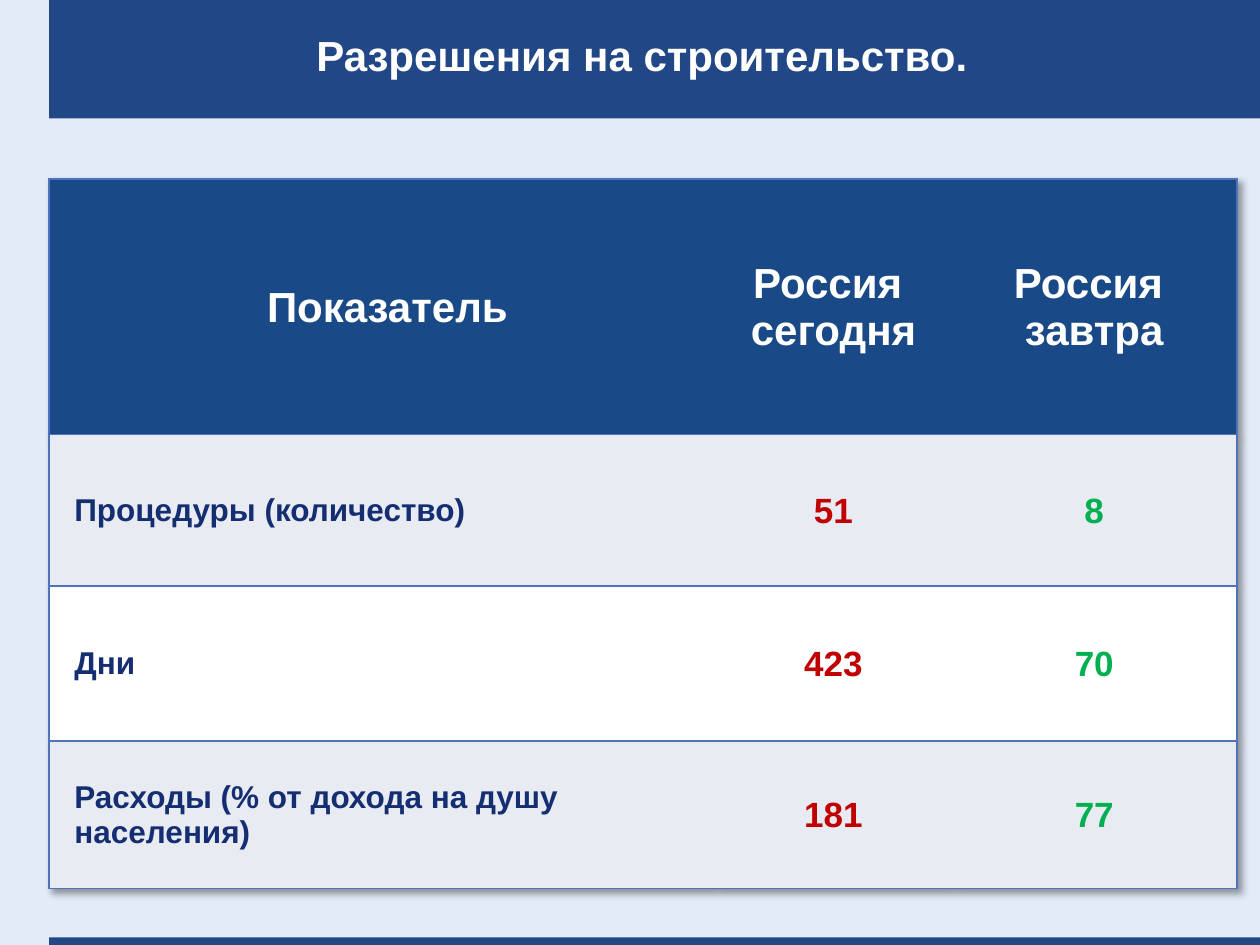
from lxml.etree import SubElement
from pptx import Presentation
from pptx.dml.color import RGBColor
from pptx.enum.shapes import MSO_SHAPE
from pptx.enum.text import MSO_ANCHOR, PP_ALIGN
from pptx.oxml import parse_xml
from pptx.oxml.ns import nsdecls, qn
from pptx.util import Inches, Pt

PALE = RGBColor(0xE3, 0xEB, 0xF8)
BAND = RGBColor(0x21, 0x47, 0x86)
HEADER = RGBColor(0x19, 0x49, 0x86)
STRIPE = RGBColor(0xE9, 0xEB, 0xF3)
WHITE = RGBColor(0xFF, 0xFF, 0xFF)
RULE = RGBColor(0x4D, 0x74, 0xBB)
NAVY = RGBColor(0x14, 0x2E, 0x71)
RED = RGBColor(0xC0, 0x00, 0x00)
GREEN = RGBColor(0x00, 0xB0, 0x50)

WIDTH, HEIGHT = Inches(10), Inches(7.5)
LEFT = Inches(0.39)
BAND_HEIGHT = Inches(0.94)
FOOTER_TOP = Inches(7.44)
COLUMNS = [5.29, 1.87, 2.27]
ROWS = [2.03, 1.2, 1.23, 1.17]
CONTENT = [
    ["Показатель", "Россия \nсегодня", "Россия \nзавтра"],
    ["Процедуры (количество)", "51", "8"],
    ["Дни", "423", "70"],
    ["Расходы (% от дохода на душу населения)", "181", "77"],
]
BODY_STYLES = [(18, NAVY), (20, RED), (20, GREEN)]


def style_text(paragraph, size, color, align):
    paragraph.alignment = align
    font = paragraph.font
    font.name, font.size, font.bold = "Arial", Pt(size), True
    font.color.rgb = color


def shadow_effect(blur, distance, color, opacity):
    return parse_xml(
        f'<a:effectLst {nsdecls("a")}><a:outerShdw blurRad="{Pt(blur)}" dist="{Pt(distance)}" '
        f'dir="2700000" algn="tl" rotWithShape="0"><a:srgbClr val="{color}">'
        f'<a:alpha val="{opacity * 1000}"/></a:srgbClr></a:outerShdw></a:effectLst>'
    )


deck = Presentation()
deck.slide_width, deck.slide_height = WIDTH, HEIGHT
slide = deck.slides.add_slide(deck.slide_layouts[6])
slide.background.fill.solid()
slide.background.fill.fore_color.rgb = PALE

for top, bottom in [(0, BAND_HEIGHT), (FOOTER_TOP, HEIGHT)]:
    band = slide.shapes.add_shape(MSO_SHAPE.RECTANGLE, LEFT, top, WIDTH - LEFT, bottom - top)
    band.fill.solid()
    band.fill.fore_color.rgb = BAND
    band.line.fill.background()
    band.shadow.inherit = False

table_frame = slide.shapes.add_table(
    len(ROWS), len(COLUMNS), LEFT, Inches(1.42), Inches(sum(COLUMNS)), Inches(sum(ROWS))
)
indicators = table_frame.table
indicators.horz_banding = False
indicators.first_row = False
indicators._tbl.tblPr.insert(0, shadow_effect(4, 3, "000000", 40))
for column, width in zip(indicators.columns, COLUMNS):
    column.width = Inches(width)

for r, (labels, height) in enumerate(zip(CONTENT, ROWS)):
    indicators.rows[r].height = Inches(height)
    for c, label in enumerate(labels):
        cell = indicators.cell(r, c)
        cell.text = label
        cell.vertical_anchor = MSO_ANCHOR.MIDDLE
        cell.margin_left = cell.margin_top = cell.margin_right = Inches(0.01)
        cell.margin_bottom = 0
        cell.fill.solid()
        cell.fill.fore_color.rgb = HEADER if r == 0 else STRIPE if r % 2 else WHITE

        size, color = (24, WHITE) if r == 0 else BODY_STYLES[c]
        align = PP_ALIGN.LEFT if r and c == 0 else PP_ALIGN.CENTER
        for paragraph in cell.text_frame.paragraphs:
            if c == 0:
                indent = Inches(0.19 if r else 0.08)
                paragraph._p.get_or_add_pPr().set("marL", str(indent))
            style_text(paragraph, size, color, align)

        ruled = {"L": c == 0, "R": c == len(COLUMNS) - 1, "T": True, "B": True}
        cell_properties = cell._tc.get_or_add_tcPr()
        for position, (side, visible) in enumerate(ruled.items()):
            border = SubElement(cell_properties, qn(f"a:ln{side}"), w=str(Pt(1)))
            if visible:
                fill = SubElement(border, qn("a:solidFill"))
                SubElement(fill, qn("a:srgbClr"), val=str(RULE))
            else:
                SubElement(border, qn("a:noFill"))
            cell_properties.insert(position, border)

title = slide.shapes.add_textbox(LEFT, 0, Inches(9.21), BAND_HEIGHT).text_frame
title.word_wrap = True
title.vertical_anchor = MSO_ANCHOR.MIDDLE
title.margin_left = Inches(0.2)
title.margin_top = title.margin_right = title.margin_bottom = 0
title.text = "Разрешения на строительство."
heading = title.paragraphs[0]
heading.line_spacing = 0.8
style_text(heading, 24, WHITE, PP_ALIGN.CENTER)
heading.runs[0].font._element.append(shadow_effect(0, 3, "000000", 100))

deck.save("out.pptx")
